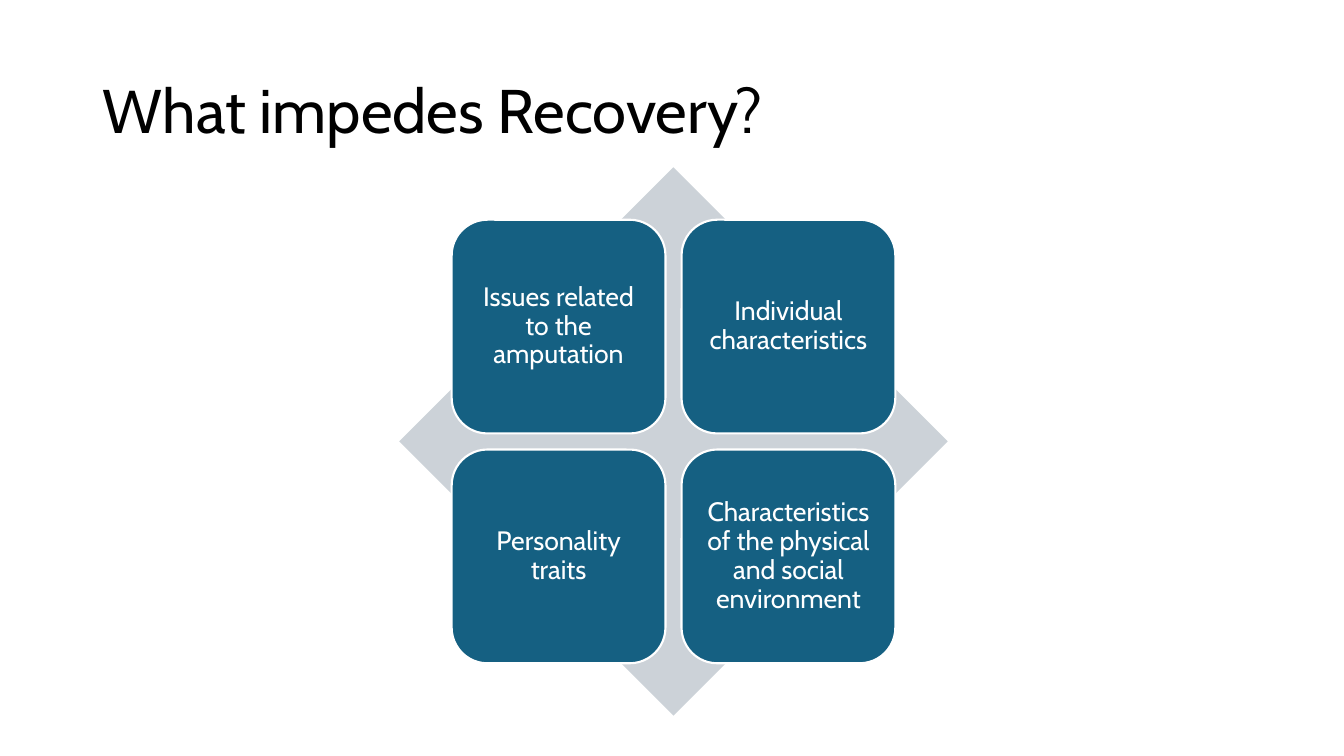
from pptx import Presentation
from pptx.dml.color import RGBColor
from pptx.enum.shapes import MSO_SHAPE as Shape
from pptx.enum.text import MSO_ANCHOR as Anchor, MSO_AUTO_SIZE as AutoSize, PP_ALIGN as Align
from pptx.util import Inches, Pt

BLACK = RGBColor(0x00, 0x00, 0x00)
WHITE = RGBColor(0xFF, 0xFF, 0xFF)
TEAL = RGBColor(0x15, 0x60, 0x82)
GREY = RGBColor(0xCC, 0xD2, 0xD8)

TITLE_ONLY = 5
DIAMOND_LEFT, DIAMOND_TOP, DIAMOND_SIZE = 3.96, 1.66, 5.44
TILE_SIZE, TILE_STEP = 2.12, 2.28
TILE_MARGIN = 0.52  # from the diamond's bounds to the first tile

BARRIERS = [
    ["Issues related to the amputation", "Individual characteristics"],
    ["Personality traits", "Characteristics of the physical and social environment"],
]


class SlideBuilder:
    font_name = "Cabin"
    line_spacing = 0.9

    def __init__(self, deck):
        self.page = deck.slides.add_slide(deck.slide_layouts[TITLE_ONLY])
        self.matrix = None

    def add_text(self, box, text, size, color, align):
        frame = box.text_frame
        frame.word_wrap = True
        frame.auto_size = AutoSize.NONE
        frame.vertical_anchor = Anchor.MIDDLE
        para = frame.paragraphs[0]
        para.alignment = align
        para.line_spacing = self.line_spacing
        span = para.add_run()
        span.text = text
        span.font.name = self.font_name
        span.font.size = Pt(size)
        span.font.color.rgb = color

    def title(self, text, left, top, width, height):
        box = self.page.shapes.title
        box.left, box.top = Inches(left), Inches(top)
        box.width, box.height = Inches(width), Inches(height)
        self.add_text(box, text, 44, BLACK, Align.LEFT)

    def start_matrix(self):
        self.matrix = self.page.shapes.add_group_shape()

    def square(self, kind, left, top, size, fill):
        box = self.matrix.shapes.add_shape(
            kind, Inches(left), Inches(top), Inches(size), Inches(size))
        box.shadow.inherit = False
        box.fill.solid()
        box.fill.fore_color.rgb = fill
        box.line.fill.background()
        return box

    def tile(self, text, left, top):
        box = self.square(Shape.ROUNDED_RECTANGLE, left, top, TILE_SIZE, TEAL)
        box.line.color.rgb = WHITE
        box.line.width = Pt(1.5)
        frame = box.text_frame
        frame.margin_left = frame.margin_right = Inches(0.08)
        frame.margin_top = frame.margin_bottom = Inches(0.08)
        self.add_text(box, text, 19, WHITE, Align.CENTER)


def main():
    deck = Presentation()
    deck.slide_width, deck.slide_height = Inches(13.33), Inches(7.5)
    builder = SlideBuilder(deck)

    # Title
    builder.title("What impedes Recovery?", 0.92, 0.4, 11.5, 1.45)

    # Diamond behind the matrix
    builder.start_matrix()
    builder.square(Shape.DIAMOND, DIAMOND_LEFT, DIAMOND_TOP, DIAMOND_SIZE, GREY)

    # Two by two tiles
    for row, texts in enumerate(BARRIERS):
        for column, text in enumerate(texts):
            builder.tile(text,
                         DIAMOND_LEFT + TILE_MARGIN + column * TILE_STEP,
                         DIAMOND_TOP + TILE_MARGIN + row * TILE_STEP)

    deck.save("out.pptx")


if __name__ == "__main__":
    main()
